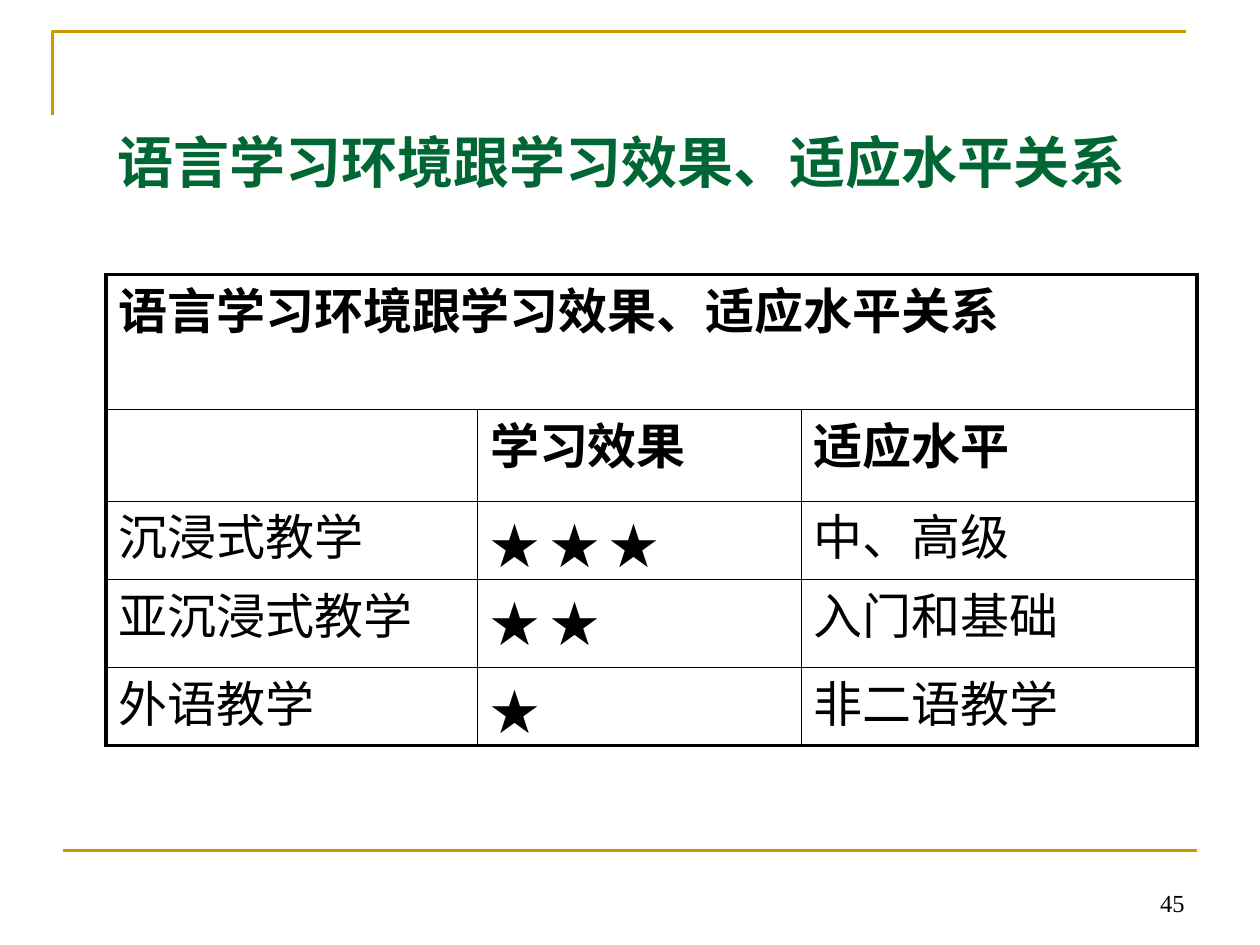
from lxml.etree import SubElement
from pptx import Presentation
from pptx.dml.color import RGBColor
from pptx.enum.shapes import MSO_CONNECTOR
from pptx.enum.text import MSO_ANCHOR, PP_ALIGN
from pptx.oxml.ns import qn
from pptx.util import Pt

HEADING = "语言学习环境跟学习效果、适应水平关系"
ROWS = [
    (HEADING, "", ""),
    ("", "学习效果", "适应水平"),
    ("沉浸式教学", "★ ★ ★", "中、高级"),
    ("亚沉浸式教学", "★ ★", "入门和基础"),
    ("外语教学", "★", "非二语教学"),
]
COLUMN_WIDTHS = [212.4, 185, 226.1]
ROW_HEIGHTS = [77, 52.5, 44.6, 50.4, 44.6]
TABLE_LEFT, TABLE_TOP = 60.5, 157
GOLD, GREEN, BLACK = "CC9900", "006633", "000000"
SANS, BODY, SERIF = "Noto Sans CJK SC", "Lato", "Times New Roman"
OUTER, INNER = 2.25, 1

TITLE = dict(name=SANS, size=Pt(32), bold=True)
HEAD = dict(name=BODY, size=Pt(28), bold=True)
LABEL = dict(name=BODY, size=Pt(28), bold=False)
STARS = dict(name=SANS, size=Pt(28), bold=False)
NUMBER = dict(name=SERIF, size=Pt(14), bold=False)


def rgb(value):
    return RGBColor.from_string(value)


def write(frame, text, form, color=BLACK, align=PP_ALIGN.LEFT):
    para = frame.paragraphs[0]
    para.alignment = align
    span = para.add_run()
    span.text = text
    for key, value in form.items():
        setattr(span.font, key, value)
    span.font.color.rgb = rgb(color)
    east_asian = SubElement(span.font._element, qn("a:ea"))
    east_asian.set("typeface", form["name"])


def add_text(page, bounds, *content):
    frame = page.shapes.add_textbox(*map(Pt, bounds)).text_frame
    frame.word_wrap = True
    frame.vertical_anchor = MSO_ANCHOR.BOTTOM
    write(frame, *content)


def set_border(cell, side, width):
    properties = cell._tc.get_or_add_tcPr()
    edge = SubElement(properties, qn("a:ln" + side), w=str(Pt(width)))
    fill = SubElement(edge, qn("a:solidFill"))
    SubElement(fill, qn("a:srgbClr"), val=BLACK)


def add_rules(page):
    """Draw the gold corner at the top and the gold line at the foot."""
    builder = page.shapes.build_freeform(Pt(30), Pt(66))
    builder.add_line_segments([(Pt(30), Pt(18)), (Pt(678), Pt(18))], close=False)
    corner = builder.convert_to_shape()
    corner.shadow.inherit = False
    corner.fill.background()
    foot = page.shapes.add_connector(
        MSO_CONNECTOR.STRAIGHT, Pt(36), Pt(486), Pt(684), Pt(486))
    SubElement(foot._element.spPr, qn("a:effectLst"))
    for shape in (corner, foot):
        shape.line.color.rgb = rgb(GOLD)
        shape.line.width = Pt(1.5)


def add_comparison(page):
    last_row, last_column = len(ROWS) - 1, len(COLUMN_WIDTHS) - 1
    table = page.shapes.add_table(
        len(ROWS), len(COLUMN_WIDTHS), Pt(TABLE_LEFT), Pt(TABLE_TOP),
        Pt(sum(COLUMN_WIDTHS)), Pt(sum(ROW_HEIGHTS))).table
    table.first_row = table.horz_banding = False
    for column, width in zip(table.columns, COLUMN_WIDTHS):
        column.width = Pt(width)
    for row, height in zip(table.rows, ROW_HEIGHTS):
        row.height = Pt(height)
    table.cell(0, 0).merge(table.cell(0, last_column))

    for r, texts in enumerate(ROWS):
        for c, text in enumerate(texts):
            cell = table.cell(r, c)
            on_edge = {"L": c == 0, "R": c == last_column or r == 0,
                       "T": r == 0, "B": r == last_row}
            for side, outer in on_edge.items():
                set_border(cell, side, OUTER if outer else INNER)
            cell.fill.background()
            form = HEAD if r < 2 else STARS if c == 1 else LABEL
            if text:
                write(cell.text_frame, text, form)
            else:
                cell.text_frame.paragraphs[0].font.size = form["size"]


def main():
    deck = Presentation()
    deck.slide_width, deck.slide_height = Pt(720), Pt(540)
    page = deck.slides.add_slide(deck.slide_layouts[6])
    add_rules(page)
    add_text(page, (60, 43, 613.5, 72), HEADING, TITLE, GREEN)
    add_comparison(page)
    add_text(page, (516, 492, 168, 36), "45", NUMBER, BLACK, PP_ALIGN.RIGHT)
    deck.save("out.pptx")


if __name__ == "__main__":
    main()
